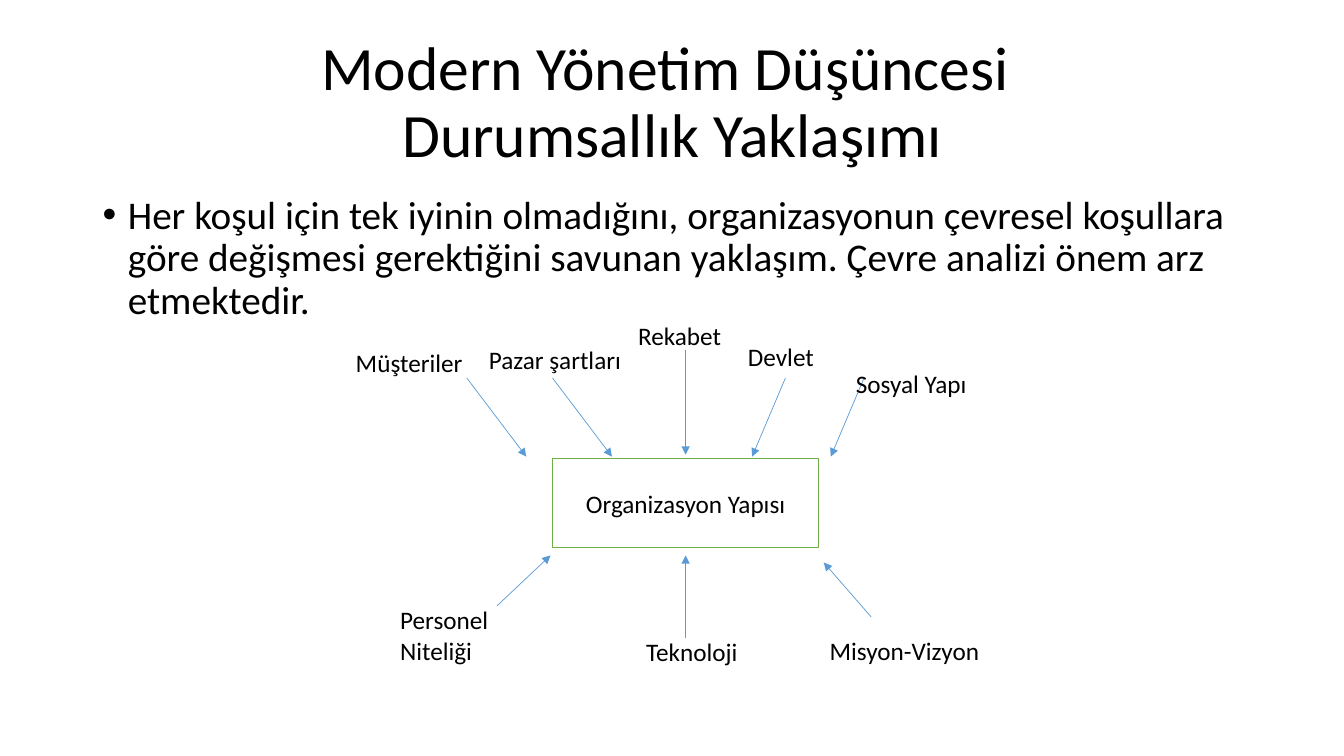
"""Build the contingency approach slide with its diagram of outside forces."""
from dataclasses import dataclass

import pptx
import pptx.dml.color
import pptx.enum.shapes
import pptx.enum.text
import pptx.oxml.ns
import pptx.shapes.autoshape
import pptx.shapes.base
import pptx.shapes.connector
import pptx.slide
import pptx.util
from lxml import etree

Inches = pptx.util.Inches
Align = pptx.enum.text.PP_ALIGN
Anchor = pptx.enum.text.MSO_ANCHOR
AutoSize = pptx.enum.text.MSO_AUTO_SIZE


@dataclass(frozen=True)
class Theme:
    font: str = "Calibri"
    text: str = "000000"
    background: str = "FFFFFF"
    frame: str = "70AD47"
    arrow: str = "5B9BD5"
    title_size: int = 44
    body_size: int = 28
    label_size: int = 18
    frame_width: float = 1
    arrow_width: float = 0.5


@dataclass(frozen=True)
class Area:
    left: float
    top: float
    width: float
    height: float = 0.4


@dataclass(frozen=True)
class Force:
    name: str
    area: Area
    start: tuple[float, float]
    end: tuple[float, float]


THEME = Theme()
TITLE_AREA = Area(0.92, 0.31, 11.5, 1.45)
BODY_AREA = Area(0.92, 1.89, 11.5, 4.76)
STRUCTURE_AREA = Area(5.48, 4.55, 2.64, 0.88)
FORCES = (
    Force("Müşteriler", Area(3.43, 3.4, 1.32), (4.63, 3.75), (5.22, 4.53)),
    Force("Pazar şartları", Area(4.75, 3.37, 1.66), (5.48, 3.75), (6.07, 4.53)),
    Force("Rekabet", Area(6.23, 3.13, 1.39), (6.8, 3.47), (6.8, 4.51)),
    Force("Devlet", Area(7.32, 3.34, 1.39), (7.79, 3.75), (7.46, 4.53)),
    Force("Sosyal Yapı", Area(8.39, 3.6, 1.39), (8.57, 3.75), (8.24, 4.53)),
    Force("Personel Niteliği", Area(3.87, 5.95, 1.32, 0.71), (4.93, 6.01), (5.46, 5.51)),
    Force("Teknoloji", Area(6.31, 6.26, 1.32), (6.8, 6.33), (6.8, 5.51)),
    Force("Misyon-Vizyon", Area(8.13, 6.25, 1.92), (8.64, 6.12), (8.17, 5.58)),
)


def rgb(value: str) -> pptx.dml.color.RGBColor:
    """Turn a hexadecimal value into a colour."""
    return pptx.dml.color.RGBColor.from_string(value)


def bounds(area: Area) -> tuple[int, int, int, int]:
    """Give an area as four lengths."""
    return Inches(area.left), Inches(area.top), Inches(area.width), Inches(area.height)


def write(
    shape: pptx.shapes.base.BaseShape,
    text: str,
    *,
    size: int,
    align: Align = Align.LEFT,
    anchor: Anchor = Anchor.TOP,
    auto_size: AutoSize = AutoSize.NONE,
    line_spacing: float = 1.0,
    space_before: float = 0,
    bullet: str = "",
) -> None:
    """Put one formatted paragraph into a shape."""
    frame = shape.text_frame
    frame.word_wrap = True
    frame.auto_size = auto_size
    frame.vertical_anchor = anchor
    para = frame.paragraphs[0]
    para.text = text
    para.alignment = align
    para.line_spacing = line_spacing
    para.space_before = pptx.util.Pt(space_before)
    for span in para.runs:
        span.font.name = THEME.font
        span.font.size = pptx.util.Pt(size)
        span.font.color.rgb = rgb(THEME.text)
    if bullet:
        properties = para._p.get_or_add_pPr()
        properties.set("marL", str(Inches(0.25)))
        properties.set("indent", str(Inches(-0.25)))
        font = etree.SubElement(properties, pptx.oxml.ns.qn("a:buFont"))
        font.set("typeface", "Arial")
        mark = etree.SubElement(properties, pptx.oxml.ns.qn("a:buChar"))
        mark.set("char", bullet)


def add_title(slide: pptx.slide.Slide, text: str) -> None:
    """Move and fill the title placeholder."""
    title = slide.shapes.title
    title.left, title.top, title.width, title.height = bounds(TITLE_AREA)
    write(title, text, size=THEME.title_size, align=Align.CENTER,
          anchor=Anchor.MIDDLE, line_spacing=0.9)


def add_body(slide: pptx.slide.Slide, text: str) -> None:
    """Add the bulleted statement."""
    box = slide.shapes.add_textbox(*bounds(BODY_AREA))
    write(box, text, size=THEME.body_size, line_spacing=0.9, space_before=10, bullet="•")


def add_structure(slide: pptx.slide.Slide, text: str) -> pptx.shapes.autoshape.Shape:
    """Add the framed box in the centre of the diagram."""
    box = slide.shapes.add_shape(
        pptx.enum.shapes.MSO_SHAPE.RECTANGLE, *bounds(STRUCTURE_AREA))
    box.shadow.inherit = False
    box.fill.solid()
    box.fill.fore_color.rgb = rgb(THEME.background)
    box.line.color.rgb = rgb(THEME.frame)
    box.line.width = pptx.util.Pt(THEME.frame_width)
    write(box, text, size=THEME.label_size, align=Align.CENTER, anchor=Anchor.MIDDLE)
    return box


def add_arrow(slide: pptx.slide.Slide, force: Force) -> pptx.shapes.connector.Connector:
    """Draw the arrow from a force towards the structure."""
    arrow = slide.shapes.add_connector(
        pptx.enum.shapes.MSO_CONNECTOR.STRAIGHT,
        *(Inches(length) for length in force.start + force.end))
    arrow.line.color.rgb = rgb(THEME.arrow)
    arrow.line.width = pptx.util.Pt(THEME.arrow_width)
    head = etree.SubElement(arrow.line._get_or_add_ln(), pptx.oxml.ns.qn("a:tailEnd"))
    head.set("type", "triangle")
    etree.SubElement(arrow._element.spPr, pptx.oxml.ns.qn("a:effectLst"))
    return arrow


def add_label(slide: pptx.slide.Slide, force: Force) -> None:
    """Add the name of a force."""
    box = slide.shapes.add_textbox(*bounds(force.area))
    write(box, force.name, size=THEME.label_size, auto_size=AutoSize.SHAPE_TO_FIT_TEXT)


def main() -> None:
    """Build and save the deck."""
    deck = pptx.Presentation()
    deck.slide_width = Inches(13.33)
    deck.slide_height = Inches(7.5)
    page = deck.slides.add_slide(deck.slide_layouts.get_by_name("Title Only"))
    page.background.fill.solid()
    page.background.fill.fore_color.rgb = rgb(THEME.background)
    add_title(page, "Modern Yönetim Düşüncesi \vDurumsallık Yaklaşımı")
    add_body(page, "Her koşul için tek iyinin olmadığını, organizasyonun çevresel "
                   "koşullara göre değişmesi gerektiğini savunan yaklaşım. "
                   "Çevre analizi önem arz etmektedir.")
    add_structure(page, "Organizasyon Yapısı")
    for force in FORCES:
        add_arrow(page, force)
        add_label(page, force)
    deck.save("out.pptx")


if __name__ == "__main__":
    main()
